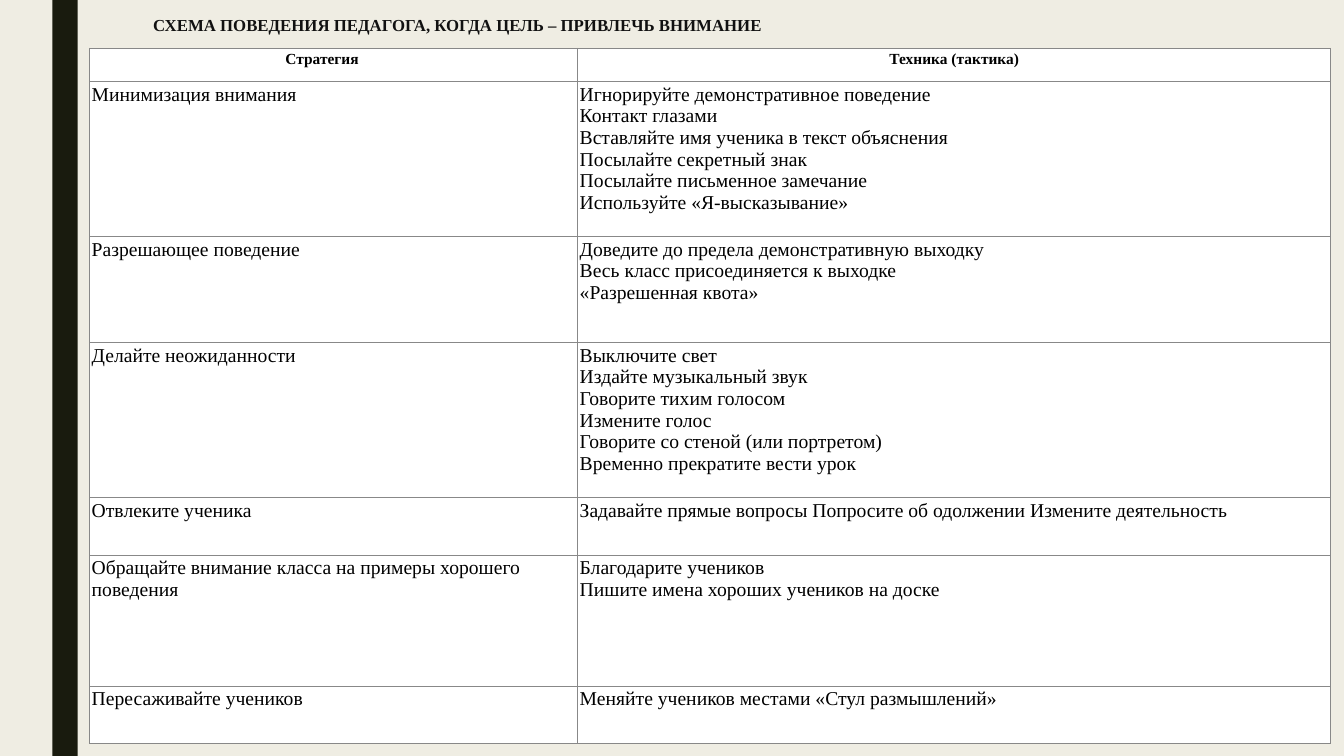
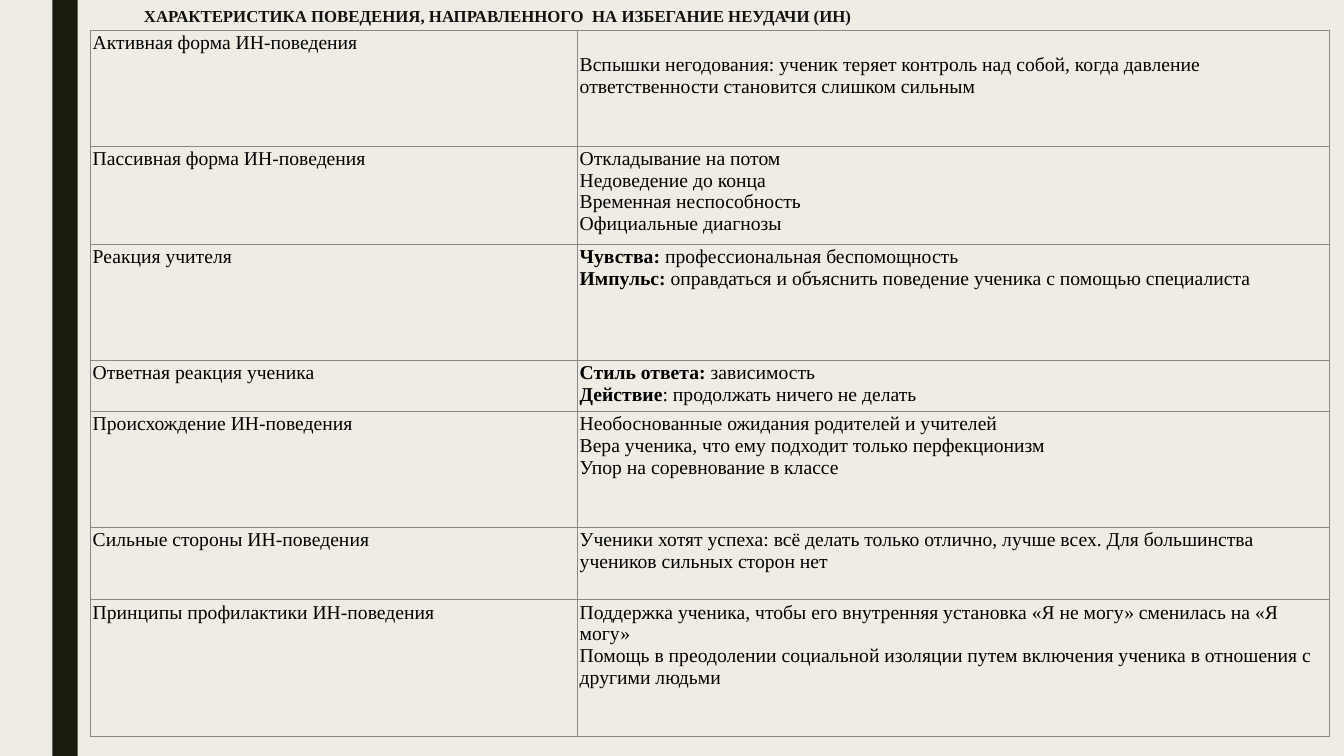
from pptx import Presentation
from pptx.dml.color import RGBColor
from pptx.enum import shapes, text
from pptx.oxml import parse_xml
from pptx.oxml.ns import nsdecls
from pptx.util import Inches, Pt

HUES = {"page": "EFEDE3", "band": "191B0E", "title": "111111",
        "text": "000000", "line": "888888", "white": "FFFFFF"}
FACE = "Times New Roman"
PAD = 0.02

# Each row: height, left cell, lines of the right cell; "|" ends a bold lead.
SLIDES = [
    {"title": "СХЕМА ПОВЕДЕНИЯ ПЕДАГОГА, КОГДА ЦЕЛЬ – ПРИВЛЕЧЬ ВНИМАНИЕ",
     "box": (1.42, 0.12, 10.5, 0.36),
     "spot": (0.89, 0.48), "cols": (4.84, 7.47), "fill": "white", "head": True,
     "pads": {(0, 0): {"margin_right": 0.25}},
     "rows": [
         (0.33, "Стратегия|", ["Техника (тактика)|"]),
         (1.54, "Минимизация внимания", [
             "Игнорируйте демонстративное поведение",
             "Контакт глазами",
             "Вставляйте имя ученика в текст объяснения",
             "Посылайте секретный знак",
             "Посылайте письменное замечание",
             "Используйте «Я-высказывание»"]),
         (1.05, "Разрешающее поведение", [
             "Доведите до предела демонстративную выходку",
             "Весь класс присоединяется к выходке",
             "«Разрешенная квота»"]),
         (1.54, "Делайте неожиданности", [
             "Выключите свет",
             "Издайте музыкальный звук",
             "Говорите тихим голосом",
             "Измените голос",
             "Говорите со стеной (или портретом)",
             "Временно прекратите вести урок"]),
         (0.57, "Отвлеките ученика", [
             "Задавайте прямые вопросы Попросите об одолжении Измените деятельность"]),
         (1.3, "Обращайте внимание класса на примеры хорошего поведения", [
             "Благодарите учеников",
             "Пишите имена хороших учеников на доске"]),
         (0.57, "Пересаживайте учеников", [
             "Меняйте учеников местами «Стул размышлений»"]),
     ]},
    {"title": "ХАРАКТЕРИСТИКА ПОВЕДЕНИЯ, НАПРАВЛЕННОГО  НА ИЗБЕГАНИЕ НЕУДАЧИ (ИН)",
     "box": (1.33, 0.03, 10.5, 0.3),
     "spot": (0.9, 0.3), "cols": (4.83, 7.46), "fill": None, "head": False,
     "pads": {(0, 1): {"margin_top": 0.24}},
     "rows": [
         (1.15, "Активная форма ИН-поведения", [
             "Вспышки негодования: ученик теряет контроль над собой, когда давление "
             "ответственности становится слишком сильным"]),
         (0.93, "Пассивная форма ИН-поведения", [
             "Откладывание на потом",
             "Недоведение до конца",
             "Временная неспособность",
             "Официальные диагнозы"]),
         (1.15, "Реакция учителя", [
             "Чувства:| профессиональная беспомощность",
             "Импульс:| оправдаться и объяснить поведение ученика с помощью специалиста"]),
         (0.5, "Ответная реакция ученика", [
             "Стиль ответа:| зависимость",
             "Действие|: продолжать ничего не делать"]),
         (1.15, "Происхождение ИН-поведения", [
             "Необоснованные ожидания родителей и учителей",
             "Вера ученика, что ему подходит только перфекционизм",
             "Упор на соревнование в классе"]),
         (0.72, "Сильные стороны ИН-поведения", [
             "Ученики хотят успеха: всё делать только отлично, лучше всех. "
             "Для большинства учеников сильных сторон нет"]),
         (1.36, "Принципы профилактики ИН-поведения", [
             "Поддержка ученика, чтобы его внутренняя установка «Я не могу» "
             "сменилась на «Я могу»",
             "Помощь в преодолении социальной изоляции путем включения ученика "
             "в отношения с другими людьми"]),
     ]},
]


def paint(fill, hue):
    fill.solid()
    fill.fore_color.rgb = RGBColor.from_string(HUES[hue])


def write(frame, lines, size, hue, **form):
    """Fill a frame, one paragraph a line, with any lead before "|" in bold."""
    for i, line in enumerate(lines):
        para = frame.add_paragraph() if i else frame.paragraphs[0]
        for name, value in form.items():
            setattr(para, name, value)
        lead, _, rest = line.rpartition("|")
        for part, bold in ((lead, True), (rest, False)):
            if part:
                run = para.add_run()
                run.text = part
                look = {"name": FACE, "size": Pt(size), "bold": bold}
                for name, value in look.items():
                    setattr(run.font, name, value)
                run.font.color.rgb = RGBColor.from_string(HUES[hue])


prs = Presentation()
prs.slide_width, prs.slide_height = Inches(13.33), Inches(7.5)
paint(prs.slide_master.background.fill, "page")

for data in SLIDES:
    slide = prs.slides.add_slide(prs.slide_layouts[6])
    band = slide.shapes.add_shape(shapes.MSO_SHAPE.RECTANGLE, Inches(0.52), 0,
                                  Inches(0.25), prs.slide_height)
    band.shadow.inherit = False
    band.line.fill.background()
    paint(band.fill, "band")

    title = slide.shapes.add_textbox(*map(Inches, data["box"])).text_frame
    title.word_wrap = True
    write(title, [data["title"] + "|"], 12, "title", line_spacing=0.89)

    rows, cols = data["rows"], data["cols"]
    size = sum(cols), sum(row[0] for row in rows)
    table = slide.shapes.add_table(len(rows), len(cols),
                                   *map(Inches, data["spot"] + size)).table
    table.first_row = table.horz_banding = False
    for col, width in zip(table.columns, cols):
        col.width = Inches(width)

    for r, (height, left, right) in enumerate(rows):
        table.rows[r].height = Inches(height)
        head = data["head"] and r == 0
        form = {"alignment": text.PP_ALIGN.CENTER} if head else {}
        for c, lines in enumerate(([left], right)):
            cell = table.cell(r, c)
            pads = {f"margin_{side}": PAD for side in ("left", "top", "right", "bottom")}
            pads.update(data["pads"].get((r, c), {}))
            for name, value in pads.items():
                setattr(cell, name, Inches(value))
            props = cell._tc.get_or_add_tcPr()
            for side in "LRTB":
                props.append(parse_xml(
                    f'<a:ln{side} {nsdecls("a")} w="{Pt(0.75)}"><a:solidFill>'
                    f'<a:srgbClr val="{HUES["line"]}"/></a:solidFill></a:ln{side}>'))
            if data["fill"]:
                paint(cell.fill, data["fill"])
            else:
                cell.fill.background()
            write(cell.text_frame, lines, 11 if head else 14, "text", **form)

prs.save("out.pptx")
